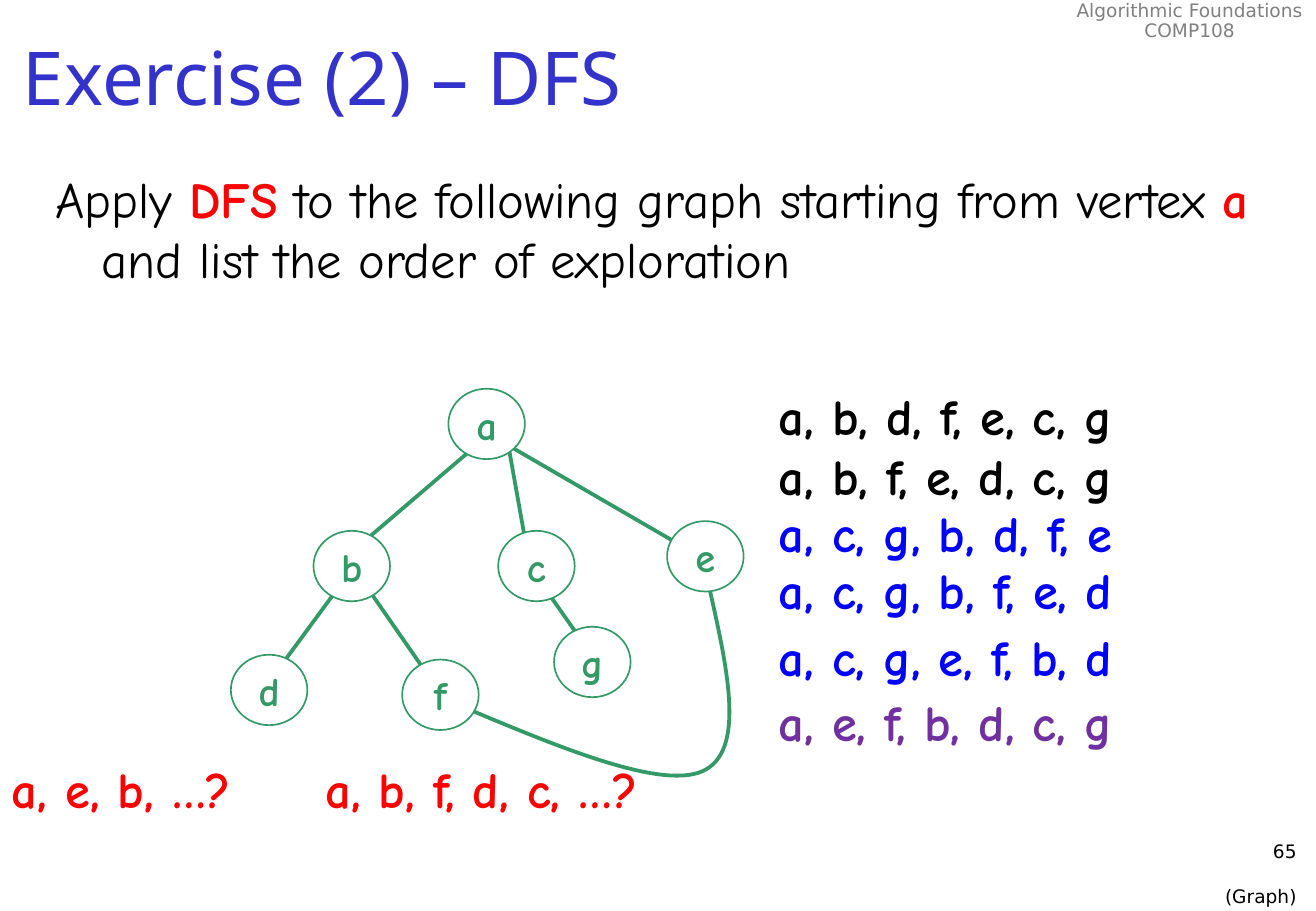
from lxml import etree
from pptx import Presentation
from pptx.dml.color import RGBColor
from pptx.enum.shapes import MSO_CONNECTOR, MSO_SHAPE
from pptx.enum.text import MSO_ANCHOR, PP_ALIGN
from pptx.oxml.ns import qn
from pptx.util import Inches, Pt

LEFT, CENTER, RIGHT = PP_ALIGN.LEFT, PP_ALIGN.CENTER, PP_ALIGN.RIGHT
TOP, MIDDLE = MSO_ANCHOR.TOP, MSO_ANCHOR.MIDDLE
STRAIGHT, OVAL = MSO_CONNECTOR.STRAIGHT, MSO_SHAPE.OVAL
HAND, SANS, HEADING = "Comic Neue", "DejaVu Sans", "Noto Sans"
COLORS = {
    "black": "000000", "white": "FFFFFF", "red": "FF0000", "blue": "0000FF",
    "purple": "7030A0", "green": "339966", "gray": "808080", "title": "3333CC",
}
NODE_W, NODE_H = 0.63, 0.58
NODES = {
    "a": (3.69, 3.2), "b": (2.58, 4.37), "c": (4.1, 4.37), "d": (1.9, 5.39),
    "e": (5.49, 4.29), "f": (3.31, 5.43), "g": (4.56, 5.16),
}
EDGES = [
    (4.01, 3.59, 2.83, 4.6), (4.17, 3.59, 4.35, 4.6), (3.93, 3.52, 5.81, 4.61),
    (2.96, 4.6, 2.21, 5.62), (2.92, 4.69, 3.62, 5.7), (4.32, 4.61, 5.03, 5.62),
]
EDGE_F_E = [(3.74, 5.79), (4.59, 6.15), (5.43, 6.5), (5.78, 6.35),
            (6.14, 6.19), (5.99, 5.52), (5.84, 4.85)]
ORDERS = [
    (6.31, 3.12, 4.19, "a, b, d, f, e, c, g", "black"),
    (6.31, 3.61, 4.19, "a, b, f, e, d, c, g", "black"),
    (6.31, 4.08, 4.19, "a, c, g, b, d, f, e", "blue"),
    (6.31, 4.55, 4.19, "a, c, g, b, f, e, d", "blue"),
    (6.31, 5.1, 4.19, "a, c, g, e, f, b, d", "blue"),
    (6.31, 5.64, 4.19, "a, e, f, b, d, c, g", "purple"),
    (0, 6.19, 2.53, "a, e, b, …?", "red"),
    (2.58, 6.19, 3.89, "a, b, f, d, c, …?", "red"),
]


def rgb(name):
    return RGBColor.from_string(COLORS[name])


def write(tf, text, size=30, font=HAND, color="black", bold=False, align=LEFT,
          anchor=TOP, wrap=True, spacing=None, before=0, marked="red"):
    """Fill a frame: one paragraph a line, with parts between asterisks marked."""
    tf.word_wrap = wrap
    tf.vertical_anchor = anchor
    for i, line in enumerate(text.split("\n")):
        p = tf.add_paragraph() if i else tf.paragraphs[0]
        p.alignment = align
        p.line_spacing = spacing
        p.space_before = Pt(before if i else 0)
        for j, part in enumerate(line.split("*")):
            r = p.add_run()
            r.text = part
            r.font.size = Pt(size)
            r.font.name = font
            r.font.bold = bold or j % 2 == 1
            r.font.color.rgb = rgb(marked if j % 2 else color)


class Deck:
    """Style and current slide of the presentation."""

    def __init__(self, width, height):
        self.prs = Presentation()
        self.prs.slide_width = Inches(width)
        self.prs.slide_height = Inches(height)
        self.s = self.prs.slides.add_slide(self.prs.slide_layouts[6])
        self.line_color = "green"

    def text(self, x, y, w, h, text, **fmt):
        sp = self.s.shapes.add_textbox(Inches(x), Inches(y), Inches(w), Inches(h))
        write(sp.text_frame, text, **fmt)
        return sp

    def outline(self, sp, width):
        sp.line.color.rgb = rgb(self.line_color)
        sp.line.width = Pt(width)

    def edge(self, x1, y1, x2, y2):
        sp = self.s.shapes.add_connector(
            STRAIGHT, Inches(x1), Inches(y1), Inches(x2), Inches(y2))
        self.outline(sp, 2.25)
        etree.SubElement(sp._element.spPr, qn("a:effectLst"))

    def curve(self, points):
        points = [(Inches(x), Inches(y)) for x, y in points]
        fb = self.s.shapes.build_freeform(*points[0])
        fb.add_line_segments(points[1:], close=False)
        sp = fb.convert_to_shape()
        sp.shadow.inherit = False
        sp.fill.background()
        self.outline(sp, 2.25)
        segments = list(sp._element.iter(qn("a:lnTo")))
        outline = segments[0].getparent()
        for i in range(0, len(segments), 3):
            bezier = etree.SubElement(outline, qn("a:cubicBezTo"))
            for segment in segments[i:i + 3]:
                bezier.append(segment[0])
                outline.remove(segment)

    def node(self, label, x, y):
        sp = self.s.shapes.add_shape(
            OVAL, Inches(x), Inches(y), Inches(NODE_W), Inches(NODE_H))
        sp.shadow.inherit = False
        sp.fill.solid()
        sp.fill.fore_color.rgb = rgb("white")
        self.outline(sp, 1)
        write(sp.text_frame, label, size=24, color="green", bold=True,
              align=CENTER, anchor=MIDDLE, wrap=False)


def main():
    deck = Deck(10.83, 7.5)
    deck.text(8.75, -0.04, 2.08, 0.43, "Algorithmic Foundations\nCOMP108", size=11,
              font=SANS, color="gray", align=CENTER, wrap=False, spacing=0.9)
    deck.text(0.09, 0, 10.74, 1.25, "Exercise (2) – DFS", size=44, font=HEADING,
              color="title", anchor=MIDDLE)
    task = deck.text(
        0.36, 1.33, 10.2, 1.3,
        "Apply *DFS* to the following graph starting from vertex *a*"
        " and list the order of exploration")
    p = task.text_frame.paragraphs[0]
    p.space_before = p.space_after = Pt(6)
    pPr = p._p.get_or_add_pPr()
    pPr.set("marL", str(Inches(0.38)))
    pPr.set("indent", str(Inches(-0.38)))
    deck.curve(EDGE_F_E)
    for edge in EDGES:
        deck.edge(*edge)
    for label, (x, y) in NODES.items():
        deck.node(label, x, y)
    for x, y, w, order, color in ORDERS:
        deck.text(x, y, w, 0.61, order, color=color, bold=True)
    deck.text(8.51, 6.87, 2.26, 0.5, "65\n(Graph)", size=11, font=SANS,
              align=RIGHT, before=13)
    deck.prs.save("out.pptx")


if __name__ == "__main__":
    main()
